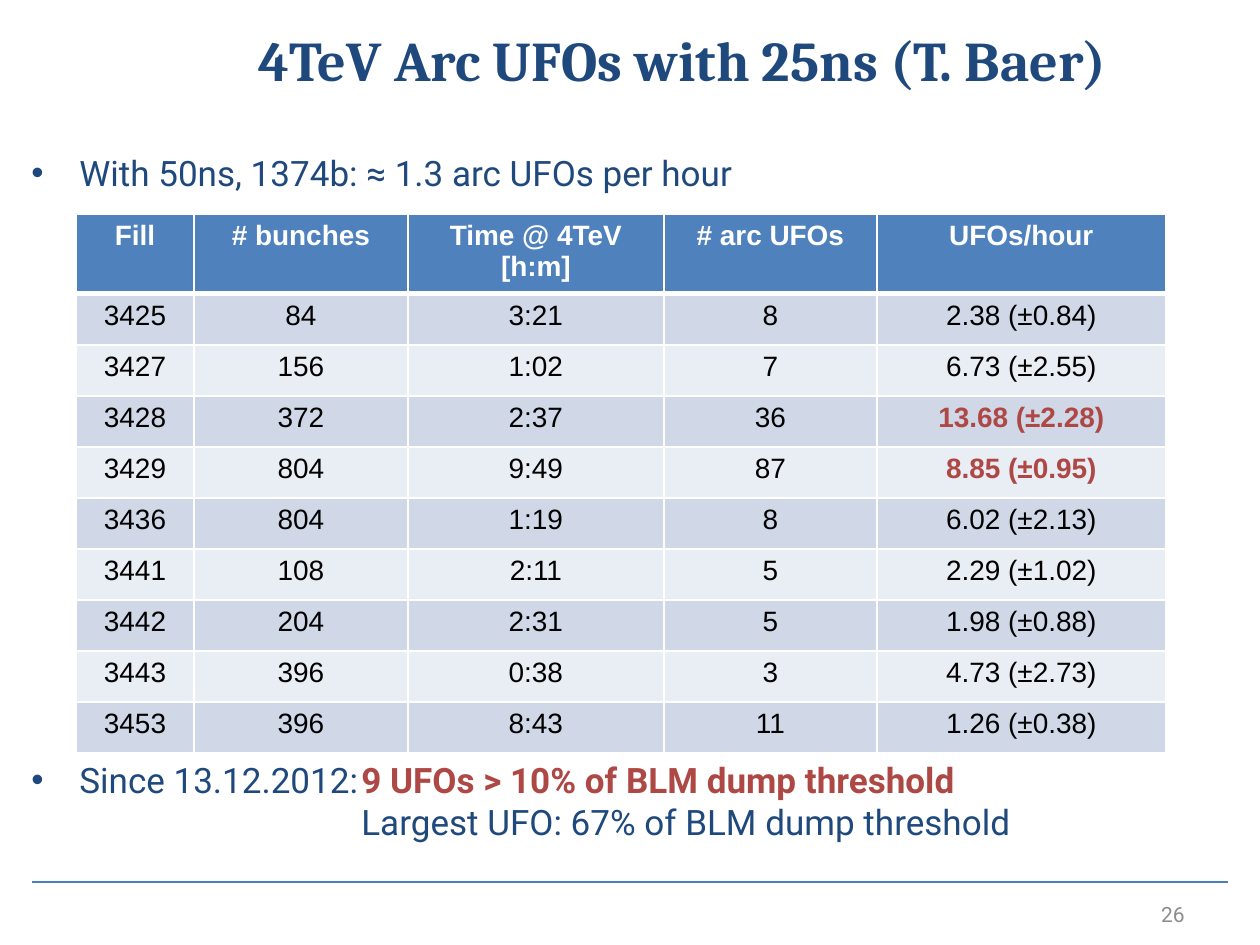
from lxml import etree
from pptx import Presentation
from pptx import util as u
from pptx.dml.color import RGBColor
from pptx.enum import shapes, text
from pptx.oxml import ns

EMU_PER_PX = 914400 / 126
NAVY, RED, WHITE, BLACK, GREY = "1F497D", "AE4845", "FFFFFF", "000000", "8C8C8C"
HEADER_FILL, ODD_FILL, EVEN_FILL, RULE = "4F81BD", "D0D8E8", "E9EDF4", "4B7EBC"

COLUMN_WIDTHS = [118, 214, 256, 213, 289]
HEADER_HEIGHT, ROW_HEIGHT = 74, 51
ROWS = [
    ["Fill", "# bunches", "Time @ 4TeV\n[h:m]", "# arc UFOs", "UFOs/hour"],
    ["3425", "84", "3:21", "8", "2.38 (±0.84)"],
    ["3427", "156", "1:02", "7", "6.73 (±2.55)"],
    ["3428", "372", "2:37", "36", "13.68 (±2.28)"],
    ["3429", "804", "9:49", "87", "8.85 (±0.95)"],
    ["3436", "804", "1:19", "8", "6.02 (±2.13)"],
    ["3441", "108", "2:11", "5", "2.29 (±1.02)"],
    ["3442", "204", "2:31", "5", "1.98 (±0.88)"],
    ["3443", "396", "0:38", "3", "4.73 (±2.73)"],
    ["3453", "396", "8:43", "11", "1.26 (±0.38)"],
]
HIGHLIGHTED_FILLS = {"3428", "3429"}


def px(length):
    return u.Emu(round(length * EMU_PER_PX))


def rgb(color):
    return RGBColor.from_string(color)


def format_font(font, name, size, color, bold=False):
    font.name, font.size, font.bold = name, u.Pt(size), bold
    font.color.rgb = rgb(color)


def add_text_frame(slide, box, anchor=text.MSO_ANCHOR.TOP):
    frame = slide.shapes.add_textbox(*map(px, box)).text_frame
    frame.word_wrap = True
    frame.vertical_anchor = anchor
    return frame


def add_right_label(slide, box, label, *font_format):
    """One right-aligned line, centred vertically in its box."""
    frame = add_text_frame(slide, box, text.MSO_ANCHOR.MIDDLE)
    frame.text = label
    paragraph = frame.paragraphs[0]
    paragraph.alignment = text.PP_ALIGN.RIGHT
    format_font(paragraph.runs[0].font, *font_format)


def make_bullet(paragraph, indent, tabs=()):
    """Hanging bullet, with left tab stops measured from the text edge."""
    properties = paragraph._p.get_or_add_pPr()
    properties.set("marL", str(px(indent)))
    properties.set("indent", str(px(-indent)))
    bullet_font = etree.SubElement(properties, ns.qn("a:buFont"))
    bullet_font.set("typeface", "Arial")
    etree.SubElement(properties, ns.qn("a:buChar")).set("char", "•")
    if tabs:
        tab_list = etree.SubElement(properties, ns.qn("a:tabLst"))
        for position in tabs:
            tab = etree.SubElement(tab_list, ns.qn("a:tab"))
            tab.set("pos", str(px(position)))
            tab.set("algn", "l")


def add_run(paragraph, content, color=NAVY, bold=False):
    run = paragraph.add_run()
    run.text = content
    format_font(run.font, "Roboto", 20, color, bold)


def add_body(slide, box):
    """Two bullets, spaced apart to leave room for the table."""
    frame = add_text_frame(slide, box)
    before = frame.paragraphs[0]
    make_bullet(before, 48)
    add_run(before, "With 50ns, 1374b: ≈ 1.3 arc UFOs per hour")

    since = frame.add_paragraph()
    make_bullet(since, 48, tabs=(96, 330))
    since.space_before = u.Pt(323)
    add_run(since, "Since 13.12.2012:\t")
    add_run(since, "9 UFOs > 10% of BLM dump threshold", RED, True)
    since.add_line_break()
    add_run(since, "\t\tLargest UFO: 67% of BLM dump threshold")


def set_borders(cell, bottom_width):
    properties = cell._tc.get_or_add_tcPr()
    widths = {"a:lnL": 1, "a:lnR": 1, "a:lnT": 1, "a:lnB": bottom_width}
    for tag, width in widths.items():
        line = etree.SubElement(properties, ns.qn(tag))
        line.set("w", str(u.Pt(width)))
        fill = etree.SubElement(line, ns.qn("a:solidFill"))
        etree.SubElement(fill, ns.qn("a:srgbClr")).set("val", WHITE)


def fill_cell(cell, content, fill, color, bold, bottom_width=1):
    set_borders(cell, bottom_width)
    cell.fill.solid()
    cell.fill.fore_color.rgb = rgb(fill)
    cell.text_frame.text = content
    for paragraph in cell.text_frame.paragraphs:
        paragraph.alignment = text.PP_ALIGN.CENTER
        format_font(paragraph.runs[0].font, "Arial", 16, color, bold)


def add_ufo_table(slide, left, top):
    height = HEADER_HEIGHT + ROW_HEIGHT * (len(ROWS) - 1)
    box = left, top, sum(COLUMN_WIDTHS), height
    table = slide.shapes.add_table(len(ROWS), len(COLUMN_WIDTHS), *map(px, box)).table
    for column, width in zip(table.columns, COLUMN_WIDTHS):
        column.width = px(width)
    for r, values in enumerate(ROWS):
        table.rows[r].height = px(ROW_HEIGHT if r else HEADER_HEIGHT)
        for c, value in enumerate(values):
            cell = table.cell(r, c)
            if r == 0:
                fill_cell(cell, value, HEADER_FILL, WHITE, True, bottom_width=3)
                continue
            strong = values[0] in HIGHLIGHTED_FILLS and c == len(values) - 1
            fill = ODD_FILL if r % 2 else EVEN_FILL
            fill_cell(cell, value, fill, RED if strong else BLACK, strong)


def add_footer_rule(slide, left, right, y):
    rule = slide.shapes.add_connector(
        shapes.MSO_CONNECTOR.STRAIGHT, px(left), px(y), px(right), px(y))
    rule.line.color.rgb = rgb(RULE)
    rule.line.width = u.Pt(1.5)
    etree.SubElement(rule._element.spPr, ns.qn("a:effectLst"))


def main():
    presentation = Presentation()
    presentation.slide_width, presentation.slide_height = px(1260), px(945)
    slide = presentation.slides.add_slide(presentation.slide_layouts[6])
    add_footer_rule(slide, 32, 1228, 882)
    add_right_label(slide, (139, 13, 981, 93), "4TeV Arc UFOs with 25ns (T. Baer)",
                    "Cambria", 32, NAVY, True)
    add_body(slide, (19, 145, 1111, 718))
    add_ufo_table(slide, 76, 214)
    add_right_label(slide, (903, 903, 294, 23), "26", "Roboto", 12, GREY)
    presentation.save("out.pptx")


if __name__ == "__main__":
    main()
